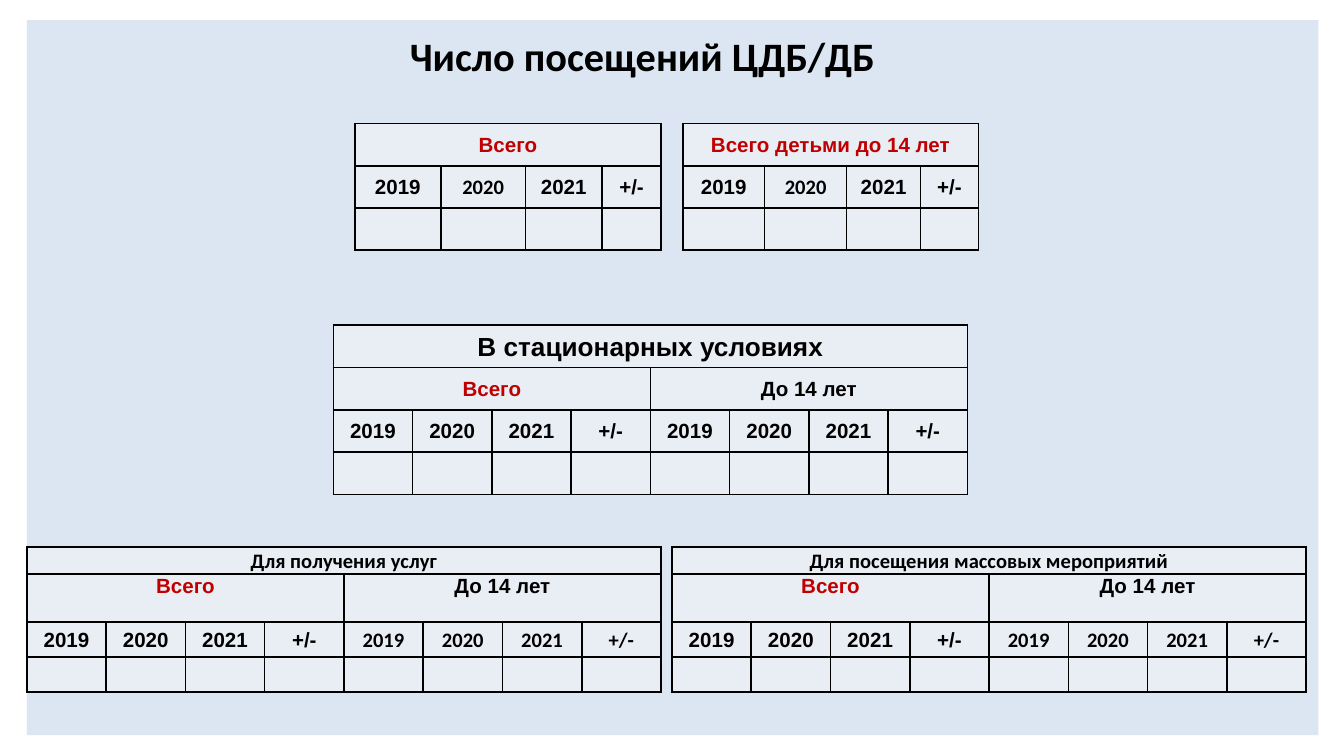
from pptx import Presentation
from pptx.dml.color import RGBColor
from pptx.enum.shapes import MSO_SHAPE
from pptx.enum.text import MSO_ANCHOR, PP_ALIGN
from pptx.oxml import parse_xml
from pptx.oxml.ns import nsdecls
from pptx.util import Inches, Pt

BLACK = RGBColor(0x00, 0x00, 0x00)
RED = RGBColor(0xC0, 0x00, 0x00)
PANEL = RGBColor(0xDC, 0xE6, 0xF2)
CELL = RGBColor(0xE9, 0xED, 0xF4)

TITLE = "Число посещений ЦДБ/ДБ"
PERIODS = ["2019", "2020", "2021", "+/-"]
A, C = "Arial", "Calibri"

# A header row lists (text, columns spanned, font, size, colour)
GROUPS = [("Всего", 4, A, 11, RED), ("До 14 лет", 4, A, 11, BLACK)]
EIGHT_COLS = [4.72 / 8] * 8
THREE_ROWS = [0.94 / 3] * 3
FOUR_ROWS = [1.26 / 4] * 4
LOW_ROWS = [0.2, 0.36, 0.26, 0.26]

TABLES = [
    dict(left=2.64, top=0.92, cols=[0.64, 0.63, 0.57, 0.44], rows=THREE_ROWS,
         headers=[[("Всего", 4, A, 11, RED)]], fonts=[A, C, A, A]),
    dict(left=0.2, top=4.07, cols=EIGHT_COLS, rows=LOW_ROWS, top_row=1,
         headers=[[("Для получения услуг", 8, C, 11, BLACK)], GROUPS],
         fonts=[A] * 4 + [C] * 4),
    dict(left=5.08, top=0.92, cols=[0.61, 0.61, 0.55, 0.43], rows=THREE_ROWS,
         headers=[[("Всего детьми до 14 лет", 4, A, 11, RED)]],
         fonts=[A, C, A, A]),
    dict(left=2.48, top=2.42, cols=EIGHT_COLS, rows=FOUR_ROWS,
         headers=[[("В стационарных условиях", 8, A, 14, BLACK)], GROUPS],
         fonts=[A] * 8),
    dict(left=5, top=4.07, cols=EIGHT_COLS, rows=LOW_ROWS, top_row=1,
         headers=[[("Для посещения массовых мероприятий", 8, C, 11, BLACK)], GROUPS],
         fonts=[A] * 4 + [C] * 4),
]


def write(tf, text, font, size, color):
    tf.text = text
    p = tf.paragraphs[0]
    p.alignment = PP_ALIGN.CENTER
    f = p.runs[0].font
    f.name, f.size, f.bold = font, Pt(size), True
    f.color.rgb = color


def style_cell(cell):
    """Fill, margins, black borders and a small size for empty text."""
    cell.margin_left = cell.margin_right = cell.margin_top = Inches(0.01)
    cell.margin_bottom = 0
    cell.vertical_anchor = MSO_ANCHOR.MIDDLE
    tc_pr = cell._tc.get_or_add_tcPr()
    for side in ("lnL", "lnR", "lnT", "lnB"):
        tc_pr.append(parse_xml(
            f'<a:{side} {nsdecls("a")} w="12700"><a:solidFill>'
            f'<a:srgbClr val="{BLACK}"/></a:solidFill></a:{side}>'))
    cell.fill.solid()
    cell.fill.fore_color.rgb = CELL
    cell.text_frame.paragraphs[0]._p.append(
        parse_xml(f'<a:endParaRPr {nsdecls("a")} sz="1100"/>'))


def add_grid(slide, left, top, cols, rows, headers, fonts, top_row=None):
    frame = slide.shapes.add_table(
        len(rows), len(cols), Inches(left), Inches(top),
        Inches(sum(cols)), Inches(sum(rows)))
    table = frame.table
    table.first_row = table.horz_banding = False
    for column, width in zip(table.columns, cols):
        column.width = Inches(width)
    for row, height in zip(table.rows, rows):
        row.height = Inches(height)
    for cell in table.iter_cells():
        style_cell(cell)

    periods = PERIODS * (len(cols) // len(PERIODS))
    period_row = [(text, 1, font, 11, BLACK) for text, font in zip(periods, fonts)]
    for r, entries in enumerate(headers + [period_row]):
        c = 0
        for text, span, font, size, color in entries:
            cell = table.cell(r, c)
            if span > 1:
                cell.merge(table.cell(r, c + span - 1))
            write(cell.text_frame, text, font, size, color)
            if r == top_row:
                cell.vertical_anchor = MSO_ANCHOR.TOP
            c += span


prs = Presentation()
prs.slide_width = Inches(10)
prs.slide_height = prs.slide_width * 9 // 16
slide = prs.slides.add_slide(prs.slide_layouts[6])

panel = slide.shapes.add_shape(
    MSO_SHAPE.RECTANGLE, Inches(0.2), Inches(0.15), Inches(9.61), Inches(5.32))
panel.shadow.inherit = False
panel.fill.solid()
panel.fill.fore_color.rgb = PANEL
panel.line.fill.background()

title = slide.shapes.add_textbox(Inches(1.22), Inches(0.21), Inches(7.12), Inches(0.41))
tf = title.text_frame
tf.word_wrap = True
tf.vertical_anchor = MSO_ANCHOR.MIDDLE
write(tf, TITLE, C, 21.6, BLACK)

for grid in TABLES:
    add_grid(slide, **grid)

prs.save("out.pptx")
